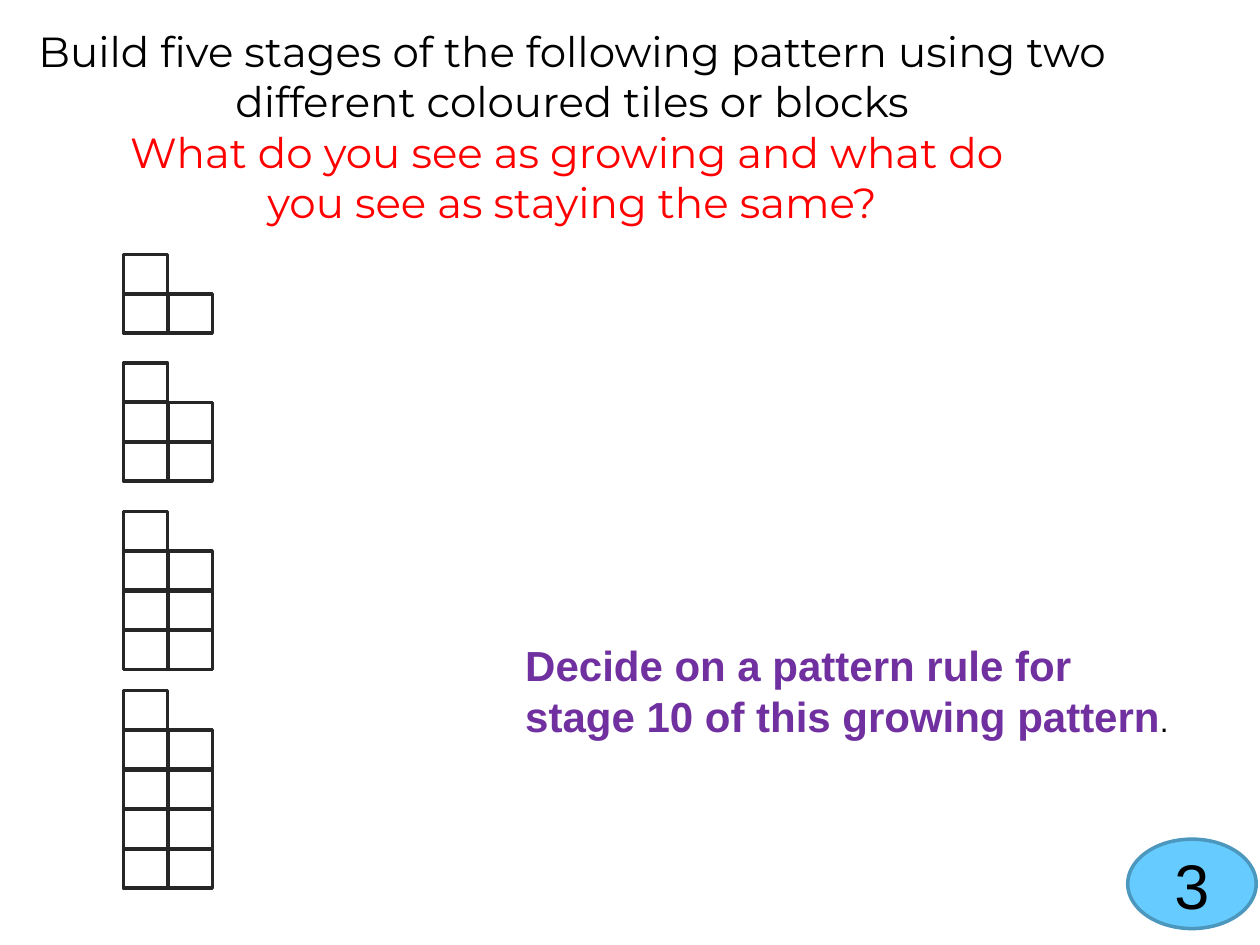
"""Build a slide about a growing tile pattern, with four stages drawn as squares."""
from dataclasses import dataclass

import pptx
import pptx.dml.color
import pptx.enum.shapes
import pptx.enum.text
import pptx.util

Inches = pptx.util.Inches
Pt = pptx.util.Pt
RGB = pptx.dml.color.RGBColor
Shape = pptx.enum.shapes.MSO_SHAPE
Align = pptx.enum.text.PP_ALIGN
Anchor = pptx.enum.text.MSO_ANCHOR


@dataclass(frozen=True)
class Theme:
    black: RGB = RGB.from_string("000000")
    red: RGB = RGB.from_string("FF0000")
    purple: RGB = RGB.from_string("7030A0")
    tile_line: RGB = RGB.from_string("262626")
    badge_fill: RGB = RGB.from_string("66CCFF")
    badge_line: RGB = RGB.from_string("4B97BD")
    heading_font: str = "Montserrat"
    body_font: str = "Arial"
    text_size: Pt = Pt(24)
    stop_size: Pt = Pt(18)
    badge_size: Pt = Pt(36)
    line_width: Pt = Pt(2)


theme = Theme()


def style_font(font, name, size, color, bold=False):
    font.name = name
    font.size = size
    font.bold = bold
    font.color.rgb = color


def add_outlined(page, kind, left, top, width, height, color):
    shape = page.shapes.add_shape(kind, left, top, width, height)
    shape.shadow.inherit = False
    shape.fill.background()
    shape.line.color.rgb = color
    shape.line.width = theme.line_width
    return shape


deck = pptx.Presentation()
deck.slide_width = Inches(10)
deck.slide_height = Inches(7.5)
page = deck.slides.add_slide(deck.slide_layouts[6])

title = page.shapes.add_textbox(Inches(0.04), Inches(0.6), Inches(9), Inches(1.25))
title.text_frame.word_wrap = True
title.text_frame.vertical_anchor = Anchor.BOTTOM
paragraph = title.text_frame.paragraphs[0]
paragraph.alignment = Align.CENTER
style_font(paragraph.font, theme.heading_font, theme.text_size, theme.black)
task = paragraph.add_run()
task.text = "Build five stages of the following pattern using two different coloured tiles or blocks"
paragraph.add_line_break()
for index, line in enumerate(["What do you see as growing and what do ", "you see as staying the same?"]):
    if index:
        paragraph.add_line_break()
    question = paragraph.add_run()
    question.text = line
    question.font.color.rgb = theme.red

tile_width, tile_height = Inches(0.35), Inches(0.31)
column_step, row_step = Inches(0.71) // 2, Inches(0.63) // 2
for stage, stage_top in enumerate([2.02, 2.88, 4.06, 5.48], start=1):
    for row in range(stage + 1):
        for column in range(2 if row else 1):
            add_outlined(page, Shape.RECTANGLE, Inches(0.98) + column * column_step,
                         Inches(stage_top) + row * row_step,
                         tile_width, tile_height, theme.tile_line)

badge = add_outlined(page, Shape.OVAL, Inches(8.95), Inches(6.66),
                     Inches(1.02), Inches(0.71), theme.badge_line)
badge.fill.solid()
badge.fill.fore_color.rgb = theme.badge_fill
badge.text_frame.vertical_anchor = Anchor.MIDDLE
paragraph = badge.text_frame.paragraphs[0]
paragraph.text = "3"
paragraph.alignment = Align.CENTER
style_font(paragraph.font, theme.body_font, theme.badge_size, theme.black)

rule = page.shapes.add_textbox(Inches(4.07), Inches(5.03), Inches(5.35), Inches(0.91))
rule.text_frame.word_wrap = False
rule.text_frame.auto_size = pptx.enum.text.MSO_AUTO_SIZE.SHAPE_TO_FIT_TEXT
rule.text_frame.text = "Decide on a pattern rule for\nstage 10 of this growing pattern"
for paragraph in rule.text_frame.paragraphs:
    style_font(paragraph.font, theme.body_font, theme.text_size, theme.purple, bold=True)
stop = rule.text_frame.paragraphs[-1].add_run()
stop.text = "."
style_font(stop.font, theme.body_font, theme.stop_size, theme.black)

deck.save("out.pptx")
